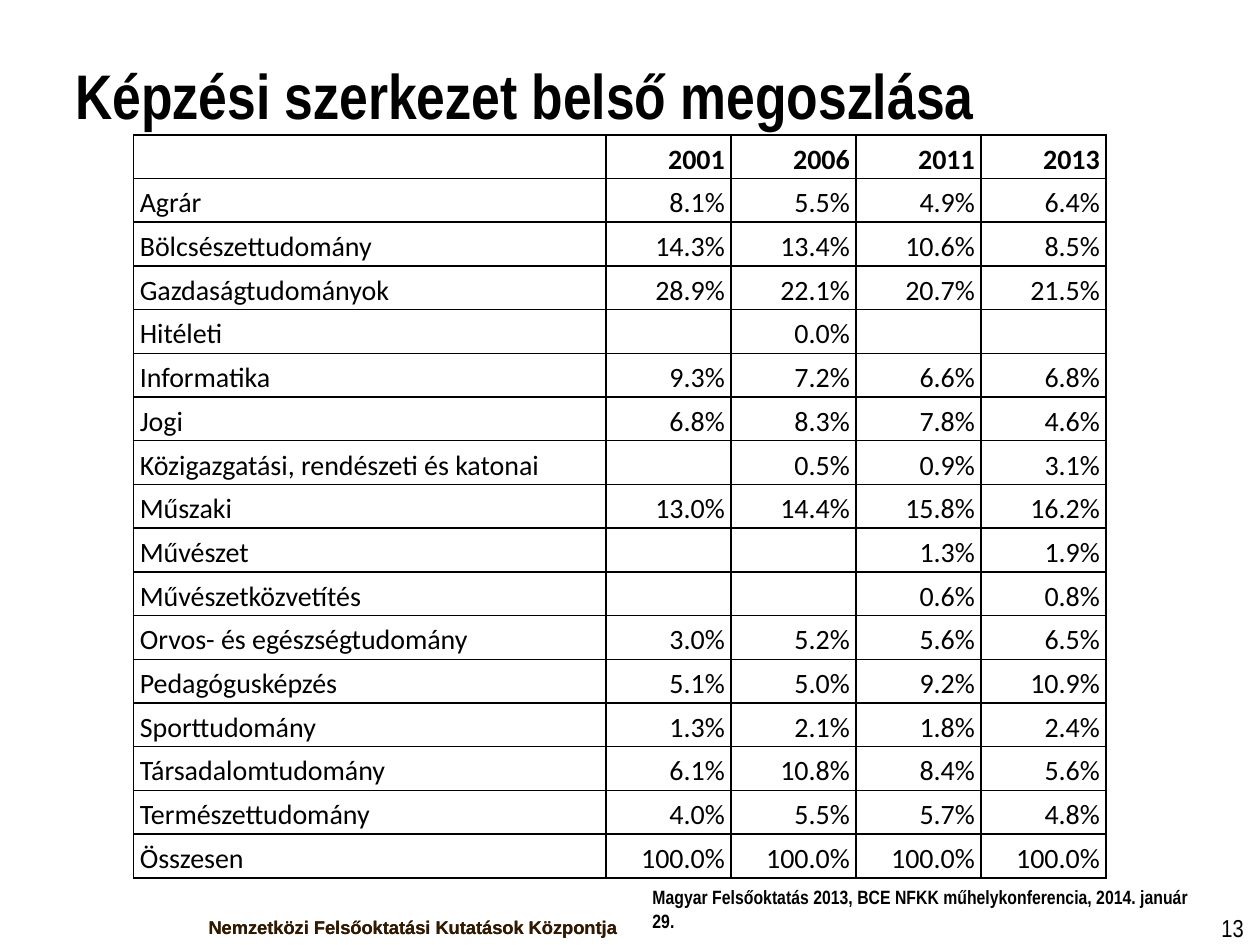
from lxml.etree import SubElement
from pptx import Presentation
from pptx.dml.color import RGBColor
from pptx.enum.text import MSO_ANCHOR, PP_ALIGN
from pptx.oxml.ns import qn
from pptx.util import Inches, Pt

INK = {"black": "000000", "brown": "2A1500", "umber": "321900"}
LEFT, RIGHT = PP_ALIGN.LEFT, PP_ALIGN.RIGHT
TOP, MID = MSO_ANCHOR.TOP, MSO_ANCHOR.MIDDLE
NARROW = "Arial Narrow"

CENTER = "Nemzetközi Felsőoktatási Kutatások Központja"
EVENT = "Magyar Felsőoktatás 2013, BCE NFKK műhelykonferencia, 2014. január 29."
TITLE = "Képzési szerkezet belső megoszlása"
FOOT = (1.38, 7.22, 3.62, 0.28)

TEXTS = [
    (CENTER, FOOT, "Arial", 10.5, True, "brown", RIGHT, TOP, 0.05),
    (EVENT, (5.08, 6.98, 4.65, 0.29), NARROW, 11, True, "black", LEFT, TOP, 0.05),
    (CENTER, FOOT, "Arial", 10.5, True, "umber", RIGHT, TOP, 0.05),
    ("13", (9.33, 7.22, 0.64, 0.28), NARROW, 14, False, "black", RIGHT, MID, 0.05),
    (TITLE, (0.5, 0.3, 9.07, 0.85), NARROW, 36, True, "black", LEFT, TOP, 0.15),
]

ROWS = [
    ("", "2001", "2006", "2011", "2013"),
    ("Agrár", "8.1%", "5.5%", "4.9%", "6.4%"),
    ("Bölcsészettudomány", "14.3%", "13.4%", "10.6%", "8.5%"),
    ("Gazdaságtudományok", "28.9%", "22.1%", "20.7%", "21.5%"),
    ("Hitéleti", "", "0.0%", "", ""),
    ("Informatika", "9.3%", "7.2%", "6.6%", "6.8%"),
    ("Jogi", "6.8%", "8.3%", "7.8%", "4.6%"),
    ("Közigazgatási, rendészeti és katonai", "", "0.5%", "0.9%", "3.1%"),
    ("Műszaki", "13.0%", "14.4%", "15.8%", "16.2%"),
    ("Művészet", "", "", "1.3%", "1.9%"),
    ("Művészetközvetítés", "", "", "0.6%", "0.8%"),
    ("Orvos- és egészségtudomány", "3.0%", "5.2%", "5.6%", "6.5%"),
    ("Pedagógusképzés", "5.1%", "5.0%", "9.2%", "10.9%"),
    ("Sporttudomány", "1.3%", "2.1%", "1.8%", "2.4%"),
    ("Társadalomtudomány", "6.1%", "10.8%", "8.4%", "5.6%"),
    ("Természettudomány", "4.0%", "5.5%", "5.7%", "4.8%"),
    ("Összesen", "100.0%", "100.0%", "100.0%", "100.0%"),
]
GRID = (1.06, 1.07, 7.72, 5.9)
FIRST = 3.75


def style(para, name, size, bold, ink, align):
    para.alignment = align
    font = para.font
    font.name, font.size, font.bold = name, Pt(size), bold
    font.color.rgb = RGBColor.from_string(INK[ink])


def add_text(slide, text, area, name, size, bold, ink, align, anchor, inset):
    frame = slide.shapes.add_textbox(*map(Inches, area)).text_frame
    frame.word_wrap = True
    frame.vertical_anchor = anchor
    frame.margin_top = Inches(inset)
    para = frame.paragraphs[0]
    para.text = text
    style(para, name, size, bold, ink, align)


def add_lines(cell):
    props = cell._tc.get_or_add_tcPr()
    for spot, side in enumerate(("lnL", "lnR", "lnT", "lnB")):
        line = SubElement(props, qn("a:" + side), w=str(Pt(1)))
        fill = SubElement(line, qn("a:solidFill"))
        SubElement(fill, qn("a:srgbClr"), val=INK["black"])
        props.insert(spot, line)


def add_grid(slide):
    count, wide = len(ROWS), len(ROWS[0])
    table = slide.shapes.add_table(count, wide, *map(Inches, GRID)).table
    rest = (GRID[2] - FIRST) / (wide - 1)
    for col, column in enumerate(table.columns):
        column.width = Inches(rest if col else FIRST)
    for row, words in enumerate(ROWS):
        table.rows[row].height = Inches(GRID[3] / count)
        for col, word in enumerate(words):
            cell = table.cell(row, col)
            cell.fill.background()
            cell.vertical_anchor = MID
            cell.margin_left = cell.margin_right = Inches(0.05)
            cell.margin_top = cell.margin_bottom = Inches(0.02)
            para = cell.text_frame.paragraphs[0]
            para.text = word
            para.line_spacing = 1.15
            style(para, "Calibri", 16, row == 0, "black", RIGHT if col else LEFT)
            add_lines(cell)


def main():
    deck = Presentation()
    deck.slide_width, deck.slide_height = Inches(10), Inches(7.5)
    slide = deck.slides.add_slide(deck.slide_layouts[6])
    for item in TEXTS:
        add_text(slide, *item)
    add_grid(slide)
    deck.save("out.pptx")


if __name__ == "__main__":
    main()
